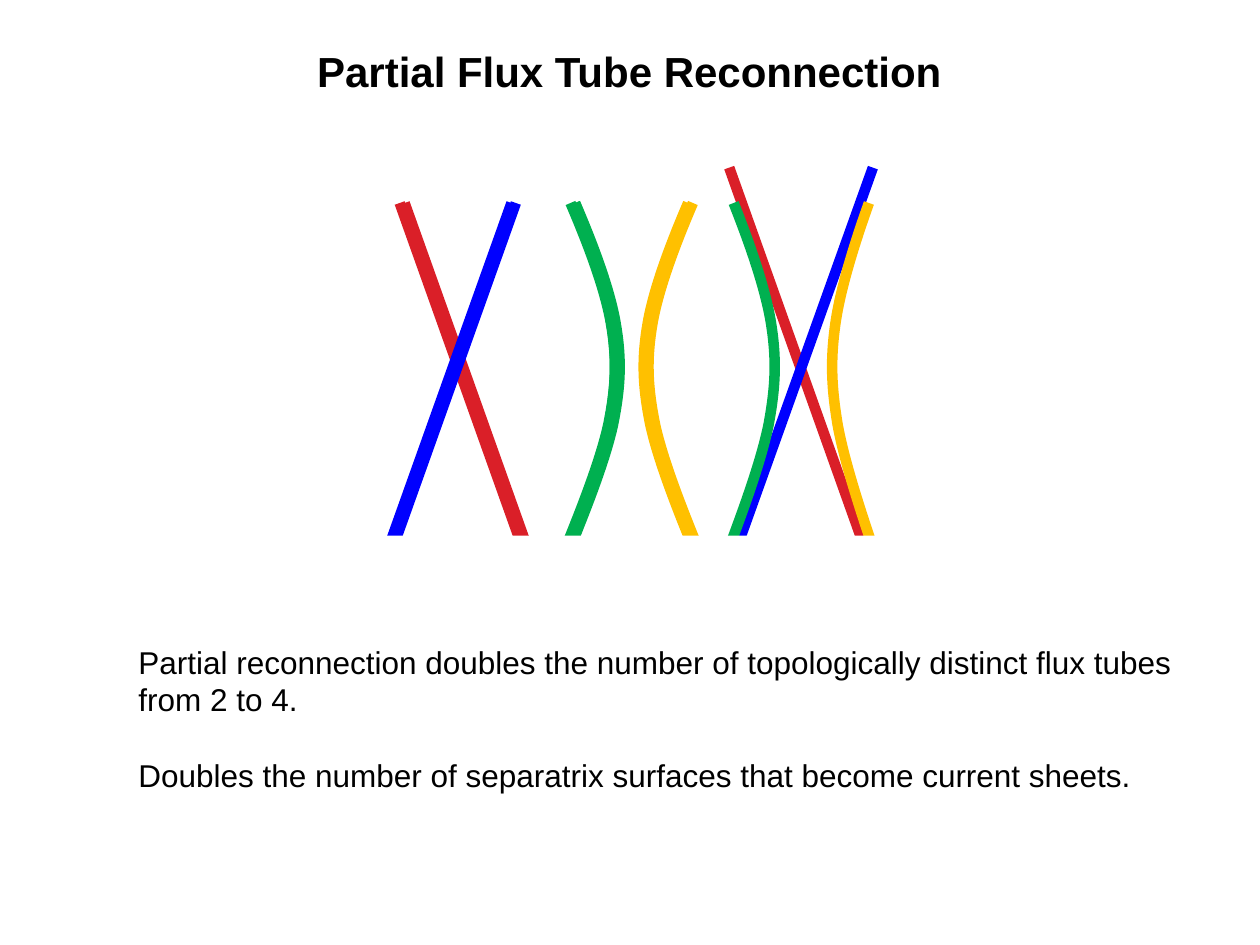
"""Build the partial flux tube reconnection slide."""
from dataclasses import dataclass

from pptx import Presentation, util as u
from pptx.dml.color import RGBColor
from pptx.enum import shapes, text
from pptx.oxml.ns import qn
from lxml import etree

RED, BLUE, GREEN, GOLD = "DA1F28", "0000FF", "00B050", "FFC000"
BLACK, WHITE = "000000", "FFFFFF"
TUBE_WIDTH = 6
BEND = [(0.07, 0), (0.42, 0.12), (0.75, 0.25), (0.87, 0.35), (1, 0.46),
        (0.97, 0.54), (0.82, 0.65), (0.67, 0.75), (0.33, 0.88), (0, 1)]


@dataclass(frozen=True)
class Straight:
    """A straight tube between two points."""
    color: str
    x1: float
    y1: float
    x2: float
    y2: float


@dataclass(frozen=True)
class Bent:
    """A bent tube, given by its foot, signed reach, top and height."""
    color: str
    foot: float
    reach: float
    top: float = 116
    height: float = 195


CROSSED = [
    Straight(RED, 416.7, 95.8, 501.1, 332.6),
    Straight(BLUE, 498.8, 95.8, 414, 332.6),
]
SEPARATED = [
    Bent(GREEN, 417.4, 26.6),
    Bent(GOLD, 498.2, -23.8),
]
INITIAL = [
    *(Straight(RED, 228.4 + shift, 116, 297.4 + shift, 309.6) for shift in (0, 2.8)),
    *(Straight(BLUE, 292.3 + shift, 116, 223.2 + shift, 309.6) for shift in (0, 2.5)),
]
RECONNECTED = [
    Bent(GREEN, 324, 28.8),
    Bent(GREEN, 326.7, 28.8),
    Bent(GREEN, 326.7, 26),
    Bent(GOLD, 395.3, -28.8),
    Bent(GOLD, 398, -28.8),
]
INNER_TUBE = Bent(GOLD, 384.5, -15.8, 146.2, 133.2)


def rgb(value: str) -> RGBColor:
    """Return a colour from a hex string."""
    return RGBColor.from_string(value)


def style_line(line, color: str) -> None:
    """Give a line the tube colour and width."""
    line.color.rgb = rgb(color)
    line.width = u.Pt(TUBE_WIDTH)


def draw_straight(page, tube: Straight) -> None:
    """Draw a straight tube as a connector."""
    ends = map(u.Pt, (tube.x1, tube.y1, tube.x2, tube.y2))
    line = page.shapes.add_connector(shapes.MSO_CONNECTOR.STRAIGHT, *ends)
    style_line(line.line, tube.color)
    etree.SubElement(line._element.spPr, qn("a:effectLst"))


def round_outline(outline) -> None:
    """Turn each three straight segments into one cubic curve."""
    segments = list(outline._element.iter(qn("a:lnTo")))
    for first in range(0, len(segments), 3):
        group = segments[first:first + 3]
        curve = etree.Element(qn("a:cubicBezTo"))
        group[0].addprevious(curve)
        for segment in group:
            curve.append(segment[0])
            segment.getparent().remove(segment)


def draw_bent(page, tube: Bent) -> None:
    """Draw a bent tube as an open curve."""
    points = [(u.Pt(tube.foot + tube.reach * x), u.Pt(tube.top + tube.height * y))
              for x, y in BEND]
    builder = page.shapes.build_freeform(*points[0])
    builder.add_line_segments(points[1:], close=False)
    outline = builder.convert_to_shape()
    round_outline(outline)
    outline.shadow.inherit = False
    outline.fill.background()
    style_line(outline.line, tube.color)


def draw_tubes(page, tubes: list) -> None:
    """Draw tubes from back to front."""
    for tube in tubes:
        draw = draw_straight if isinstance(tube, Straight) else draw_bent
        draw(page, tube)


def draw_mask(page) -> None:
    """Trim the tube feet with a white band."""
    band = page.shapes.add_shape(shapes.MSO_SHAPE.RECTANGLE, u.Pt(210.2), u.Pt(306),
                                 u.Pt(293.8), u.Pt(30.2))
    band.shadow.inherit = False
    band.fill.solid()
    band.fill.fore_color.rgb = rgb(WHITE)
    band.line.fill.background()


def add_span(para, words: str, size: float, bold: bool = False) -> None:
    """Add one formatted run."""
    para.alignment = text.PP_ALIGN.LEFT
    span = para.add_run()
    span.text = words
    span.font.name = "Arial"
    span.font.size = u.Pt(size)
    span.font.bold = bold
    span.font.color.rgb = rgb(BLACK)


def write_title(page) -> None:
    """Place and fill the title."""
    title = page.shapes.title
    title.left, title.top, title.width, title.height = map(u.Pt, (174, 22.3, 374.4, 36))
    frame = title.text_frame
    frame.word_wrap = False
    frame.auto_size = text.MSO_AUTO_SIZE.NONE
    frame.vertical_anchor = text.MSO_ANCHOR.TOP
    para = frame.paragraphs[0]
    para.space_before = u.Pt(0)
    para.line_spacing = 1.0
    add_span(para, "Partial Flux Tube Reconnection", 24, bold=True)


def write_body(page) -> None:
    """Add the two statements below the tubes."""
    box = page.shapes.add_textbox(u.Pt(72), u.Pt(363.6), u.Pt(612), u.Pt(116.6))
    frame = box.text_frame
    frame.word_wrap = True
    add_span(frame.paragraphs[0], "Partial reconnection doubles the number of "
             "topologically distinct flux tubes from 2 to 4.", 18)
    para = frame.add_paragraph()
    para.space_before = u.Pt(21.6)
    add_span(para, "Doubles the number of separatrix surfaces that become "
             "current sheets.", 18)


def main() -> None:
    """Build and save the deck."""
    deck = Presentation()
    deck.slide_width, deck.slide_height = u.Pt(720), u.Pt(540)
    page = deck.slides.add_slide(deck.slide_layouts[5])
    write_title(page)
    draw_tubes(page, CROSSED + SEPARATED + INITIAL + RECONNECTED)
    draw_mask(page)
    draw_bent(page, INNER_TUBE)
    write_body(page)
    deck.save("out.pptx")


if __name__ == "__main__":
    main()
